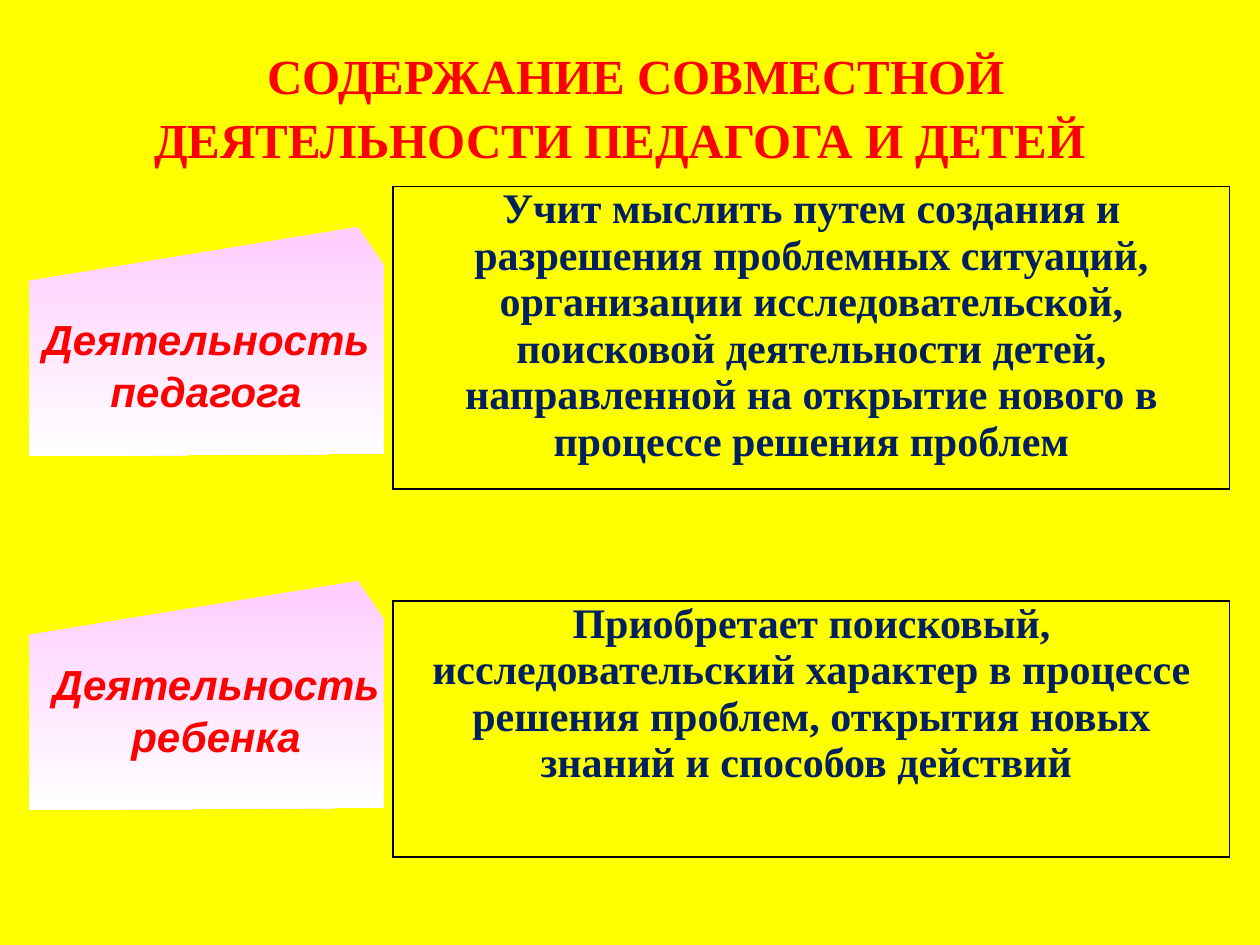
import dataclasses

import lxml.etree
import pptx
import pptx.dml.color
import pptx.enum.text
import pptx.oxml.ns
import pptx.util

Inches = pptx.util.Inches
Pt = pptx.util.Pt


@dataclasses.dataclass(frozen=True)
class Theme:
    background: str = "FFFF00"
    accent: str = "FF0000"
    body: str = "002060"
    border: str = "000000"
    gradient: tuple = ("FFCCFF", "FFFFFF")
    serif: str = "Times New Roman"
    sans: str = "Arial"
    title_size: int = 28
    body_size: int = 24


def rgb(value):
    return pptx.dml.color.RGBColor.from_string(value)


class SlideBuilder:
    """Holds the theme and the current slide."""

    def __init__(self, presentation, theme):
        self.theme = theme
        self.slide = presentation.slides.add_slide(presentation.slide_layouts[5])
        fill = self.slide.background.fill
        fill.solid()
        fill.fore_color.rgb = rgb(theme.background)

    def add_text(self, text_frame, text, font_name, size, color, italic=False, spacing=None):
        text_frame.word_wrap = True
        paragraph = text_frame.paragraphs[0]
        paragraph.alignment = pptx.enum.text.PP_ALIGN.CENTER
        paragraph.line_spacing = spacing
        run = paragraph.add_run()
        run.text = text
        font = run.font
        font.name, font.size = font_name, Pt(size)
        font.bold, font.italic = True, italic
        font.color.rgb = rgb(color)
        return paragraph

    def title(self, text, left, top, width, height):
        shape = self.slide.shapes.title
        shape.left, shape.top = Inches(left), Inches(top)
        shape.width, shape.height = Inches(width), Inches(height)
        frame = shape.text_frame
        frame.vertical_anchor = pptx.enum.text.MSO_ANCHOR.MIDDLE
        frame.auto_size = pptx.enum.text.MSO_AUTO_SIZE.SHAPE_TO_FIT_TEXT
        paragraph = self.add_text(frame, text, self.theme.serif, self.theme.title_size,
                                  self.theme.accent, spacing=1.08)
        properties = paragraph._p.get_or_add_pPr()
        properties.set("marL", "0")
        properties.set("indent", str(Inches(0.25)))

    def bordered_table(self, text, left, top, width, height):
        table = self.slide.shapes.add_table(
            1, 1, Inches(left), Inches(top), Inches(width), Inches(height)).table
        table.first_row = table.horz_banding = False
        cell = table.cell(0, 0)
        cell.margin_left = cell.margin_right = Inches(0.07)
        cell.margin_top = cell.margin_bottom = 0
        self.add_text(cell.text_frame, text, self.theme.serif, self.theme.body_size,
                      self.theme.body)
        # Borders come before the fill in the cell properties
        qn = pptx.oxml.ns.qn
        properties = cell._tc.get_or_add_tcPr()
        for side in ("lnL", "lnR", "lnT", "lnB"):
            line = lxml.etree.SubElement(properties, qn(f"a:{side}"), w=str(Pt(1)))
            solid = lxml.etree.SubElement(line, qn("a:solidFill"))
            lxml.etree.SubElement(solid, qn("a:srgbClr"), val=self.theme.border)
        cell.fill.background()

    def cut_panel(self, left, top):
        outline = [(2.61, 0), (2.82, 0.31), (2.82, 1.8), (0, 1.82), (0, 0.43)]
        points = [(Inches(left + x), Inches(top + y)) for x, y in outline]
        builder = self.slide.shapes.build_freeform(*points[0])
        builder.add_line_segments(points[1:], close=True)
        shape = builder.convert_to_shape()
        shape.shadow.inherit = False
        shape.line.fill.background()
        shape.fill.gradient()
        shape.fill.gradient_angle = 270
        for position, (stop, color) in enumerate(
                zip(shape.fill.gradient_stops, self.theme.gradient)):
            stop.position = position
            stop.color.rgb = rgb(color)

    def label(self, text, left, top, width=2.81, height=0.91):
        frame = self.slide.shapes.add_textbox(
            Inches(left), Inches(top), Inches(width), Inches(height)).text_frame
        frame.auto_size = pptx.enum.text.MSO_AUTO_SIZE.SHAPE_TO_FIT_TEXT
        self.add_text(frame, text, self.theme.sans, self.theme.body_size,
                      self.theme.accent, italic=True, spacing=1.04)


def main():
    presentation = pptx.Presentation()
    presentation.slide_width, presentation.slide_height = Inches(10), Inches(7.5)
    builder = SlideBuilder(presentation, Theme())

    # Heading
    builder.title("СОДЕРЖАНИЕ СОВМЕСТНОЙ ДЕЯТЕЛЬНОСТИ ПЕДАГОГА И ДЕТЕЙ",
                  0.31, 0.31, 9.22, 1.04)

    # Descriptions on the right
    builder.bordered_table(
        "Учит мыслить путем создания и разрешения проблемных ситуаций, "
        "организации исследовательской, поисковой деятельности детей, "
        "направленной на открытие нового в процессе решения проблем",
        3.12, 1.48, 6.64, 2.4)
    builder.bordered_table(
        "Приобретает поисковый, исследовательский характер в процессе "
        "решения проблем, открытия новых знаний и способов действий ",
        3.12, 4.77, 6.64, 2.03)

    # Panels with their labels on the left
    for text, panel_top, label_left, label_top in (
            ("Деятельность педагога", 1.8, 0.23, 2.42),
            ("Деятельность ребенка", 4.61, 0.31, 5.16)):
        builder.cut_panel(0.23, panel_top)
        builder.label(text, label_left, label_top)

    presentation.save("out.pptx")


if __name__ == "__main__":
    main()
